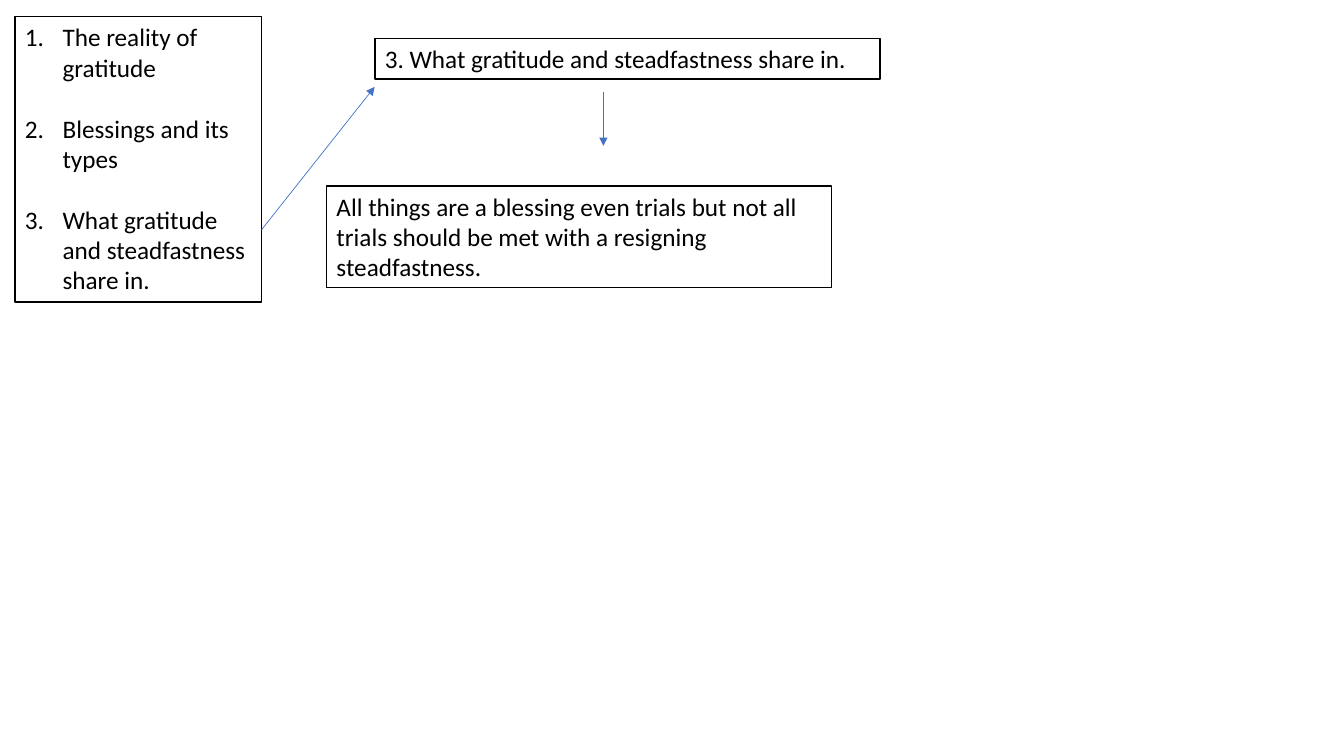
from lxml.etree import SubElement
from pptx import Presentation
from pptx.dml.color import RGBColor
from pptx.enum.shapes import MSO_CONNECTOR, MSO_SHAPE
from pptx.enum.text import MSO_ANCHOR, PP_ALIGN
from pptx.oxml.ns import qn
from pptx.util import Pt

COLORS = {"paper": "FFFFFF", "ink": "000000", "arrow": "4472C4"}
FONT, SIZE = "Calibri", 18
ITEM_GAP = 22
NUMBER_INDENT = 27

TOPICS = [
    "The reality of gratitude",
    "Blessings and its types",
    "What gratitude and steadfastness share in.",
]
HEADING = f"{len(TOPICS)}. {TOPICS[-1]}"
ANSWER = ("All things are a blessing even trials but not all trials "
          "should be met with a resigning steadfastness.")

# (left, top, width, height), paragraphs, numbered
BOXES = [
    ((10.6, 12, 176.4, 203.76), TOPICS, True),
    ((267.8, 27.4, 360.8, 29.1), [HEADING], False),
    ((233.3, 132.8, 360.8, 72.7), [ANSWER], False),
]
# (from x, from y, to x, to y)
ARROWS = [
    (431, 66, 431, 104.2),
    (186.8, 164.2, 267.6, 62.1),
]


def rgb(name):
    return RGBColor.from_string(COLORS[name])


def add_number(p):
    pPr = p._p.get_or_add_pPr()
    pPr.set("marL", str(Pt(NUMBER_INDENT)))
    pPr.set("indent", str(-Pt(NUMBER_INDENT)))
    SubElement(pPr, qn("a:buFont"), typeface="+mj-lt")
    SubElement(pPr, qn("a:buAutoNum"), type="arabicPeriod")


def add_box(slide, bounds, texts, numbered):
    sp = slide.shapes.add_shape(MSO_SHAPE.RECTANGLE, *map(Pt, bounds))
    sp.shadow.inherit = False
    sp.fill.solid()
    sp.fill.fore_color.rgb = rgb("paper")
    sp.line.color.rgb = rgb("ink")
    sp.line.width = Pt(1)
    tf = sp.text_frame
    tf.word_wrap = True
    tf.vertical_anchor = MSO_ANCHOR.TOP
    tf.text = "\n".join(texts)
    for i, p in enumerate(tf.paragraphs):
        p.alignment = PP_ALIGN.LEFT
        p.space_before = Pt(ITEM_GAP if i else 0)
        if numbered:
            add_number(p)
        font = p.runs[0].font
        font.name, font.size = FONT, Pt(SIZE)
        font.color.rgb = rgb("ink")


def add_arrow(slide, ends):
    line = slide.shapes.add_connector(MSO_CONNECTOR.STRAIGHT, *map(Pt, ends))
    line.line.color.rgb = rgb("arrow")
    line.line.width = Pt(0.5)
    SubElement(line.line._get_or_add_ln(), qn("a:tailEnd"), type="triangle")
    SubElement(line._element.spPr, qn("a:effectLst"))


def main():
    prs = Presentation()
    prs.slide_width, prs.slide_height = Pt(960), Pt(540)
    slide = prs.slides.add_slide(prs.slide_layouts[6])
    for box in BOXES:
        add_box(slide, *box)
    for ends in ARROWS:
        add_arrow(slide, ends)
    prs.save("out.pptx")


if __name__ == "__main__":
    main()
